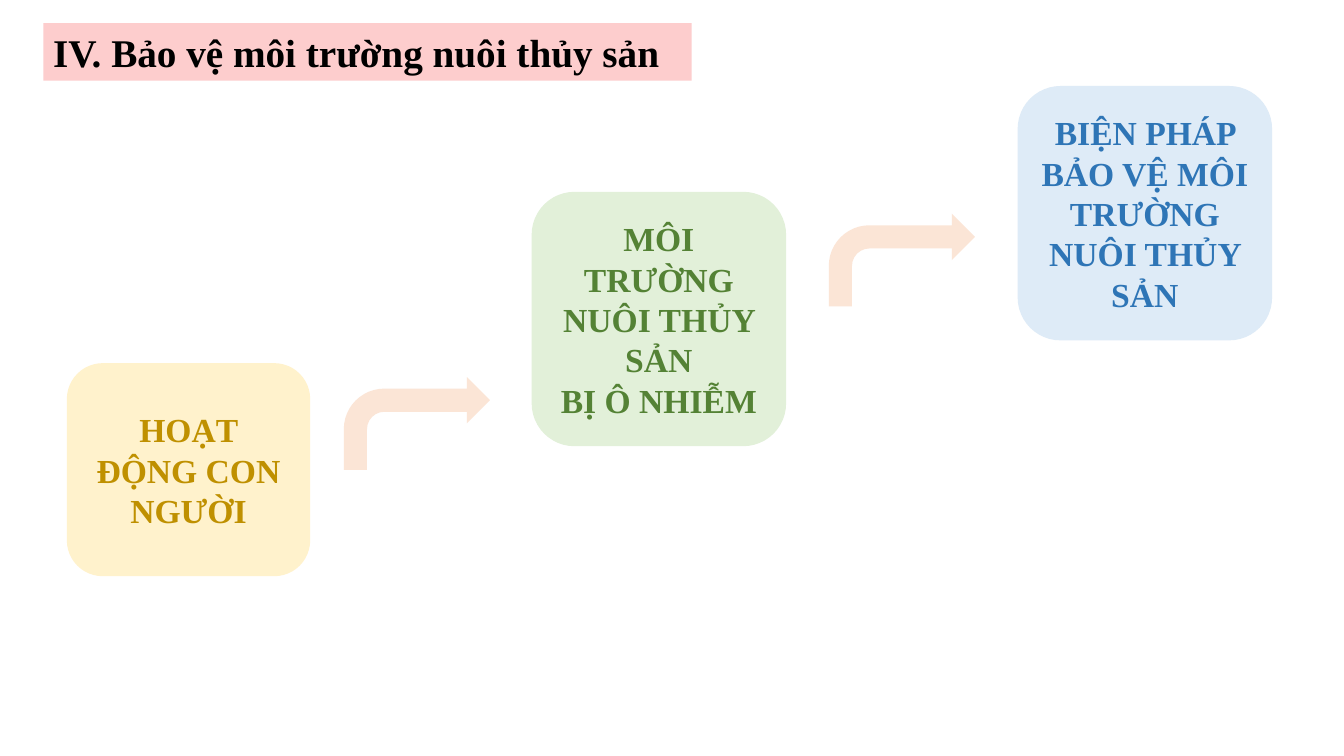
import pptx
import pptx.util
import pptx.dml.color
import pptx.enum.shapes
import pptx.enum.text

Inches = pptx.util.Inches
KIND = pptx.enum.shapes.MSO_SHAPE
ALIGN = pptx.enum.text.PP_ALIGN
ANCHOR = pptx.enum.text.MSO_ANCHOR

HEX = {
    "title": "000000", "band": "FDCDCD", "arrow": "FBE5D6",
    "gold": "BF9000", "cream": "FFF2CC",
    "green": "548235", "mint": "E2F0D9",
    "blue": "2E75B6", "sky": "DEEBF7",
}

STEPS = [
    ((0.67, 3.61, 2.4, 2.1), "cream", "gold", ["HOẠT ĐỘNG CON NGƯỜI"]),
    ((5.28, 1.91, 2.51, 2.51), "mint", "green",
     ["MÔI TRƯỜNG NUÔI THỦY SẢN", "BỊ Ô NHIỄM"]),
    ((10.1, 0.86, 2.51, 2.51), "sky", "blue",
     ["BIỆN PHÁP BẢO VỆ MÔI TRƯỜNG NUÔI THỦY SẢN"]),
]
ARROWS = [(3.41, 3.74, 1.45, 0.92), (8.22, 2.12, 1.45, 0.92)]


def color(name):
    return pptx.dml.color.RGBColor.from_string(HEX[name])


def draw(slide, kind, box, fill, edge=False):
    """Add a flat preset shape, edged in its own fill colour if asked."""
    shape = slide.shapes.add_shape(kind, *map(Inches, box))
    shape.shadow.inherit = False
    shape.fill.solid()
    shape.fill.fore_color.rgb = color(fill)
    if edge:
        shape.line.color.rgb = color(fill)
        shape.line.width = pptx.util.Pt(1)
    else:
        shape.line.fill.background()
    return shape


def write(shape, lines, size, ink, align, anchor):
    frame = shape.text_frame
    frame.word_wrap = True
    frame.vertical_anchor = anchor
    style = {"name": "Times New Roman", "size": pptx.util.Pt(size), "bold": True}
    for i, line in enumerate(lines):
        para = frame.add_paragraph() if i else frame.paragraphs[0]
        para.alignment = align
        run = para.add_run()
        run.text = line
        for key, value in style.items():
            setattr(run.font, key, value)
        run.font.color.rgb = color(ink)


def add_title(slide, box):
    band = draw(slide, KIND.RECTANGLE, box, "band")
    write(band, ["IV. Bảo vệ môi trường nuôi thủy sản"], 28, "title",
          ALIGN.LEFT, ANCHOR.TOP)
    band.text_frame.auto_size = pptx.enum.text.MSO_AUTO_SIZE.SHAPE_TO_FIT_TEXT


def add_step(slide, box, fill, ink, lines):
    card = draw(slide, KIND.FLOWCHART_ALTERNATE_PROCESS, box, fill, edge=True)
    write(card, lines, 24, ink, ALIGN.CENTER, ANCHOR.MIDDLE)


def main():
    deck = pptx.Presentation()
    deck.slide_width, deck.slide_height = Inches(13.33), Inches(7.5)
    slide = deck.slides.add_slide(deck.slide_layouts[6])
    for box in ARROWS:
        draw(slide, KIND.BENT_ARROW, box, "arrow")
    for step in STEPS:
        add_step(slide, *step)
    add_title(slide, (0.43, 0.23, 6.43, 0.57))
    deck.save("out.pptx")


if __name__ == "__main__":
    main()
